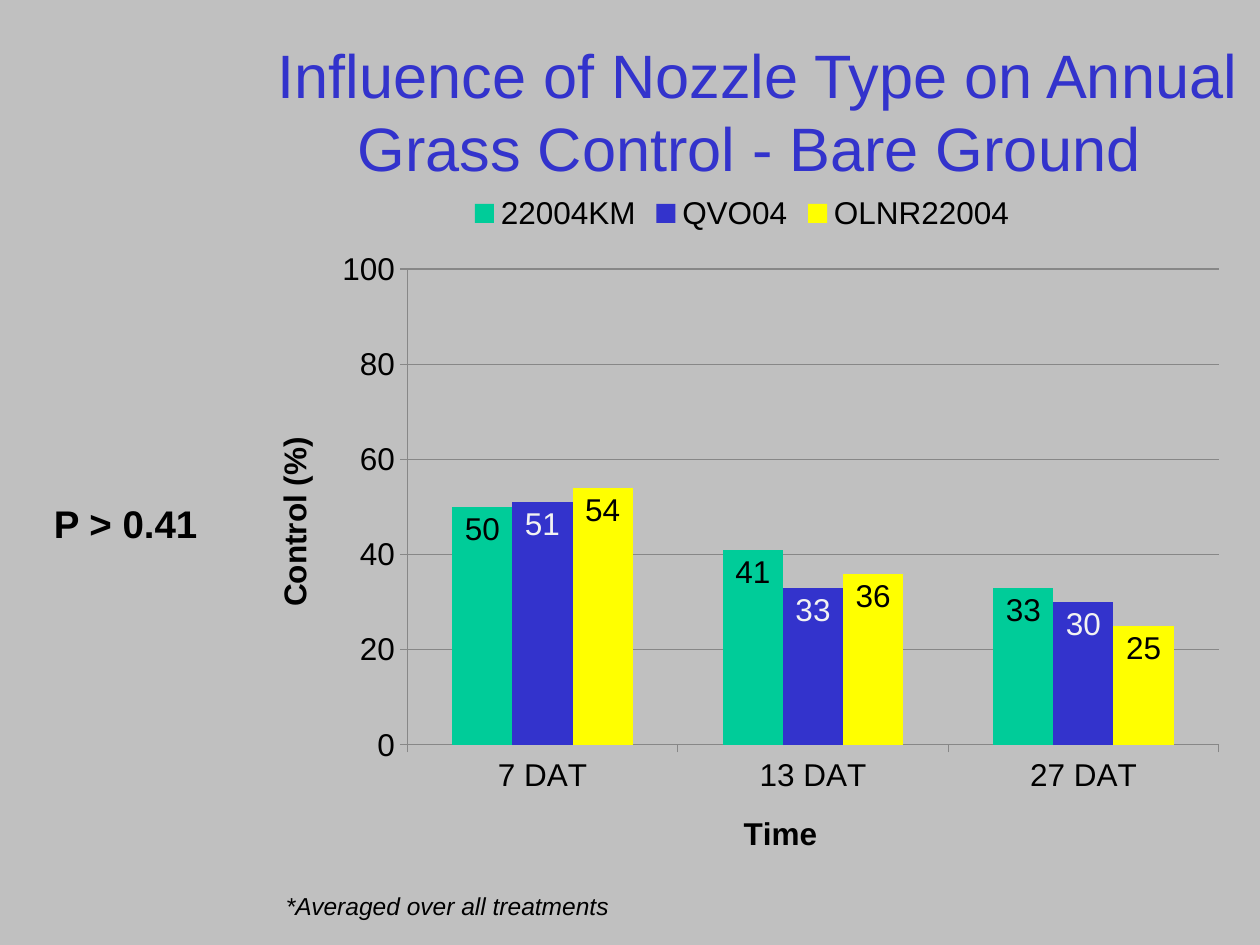
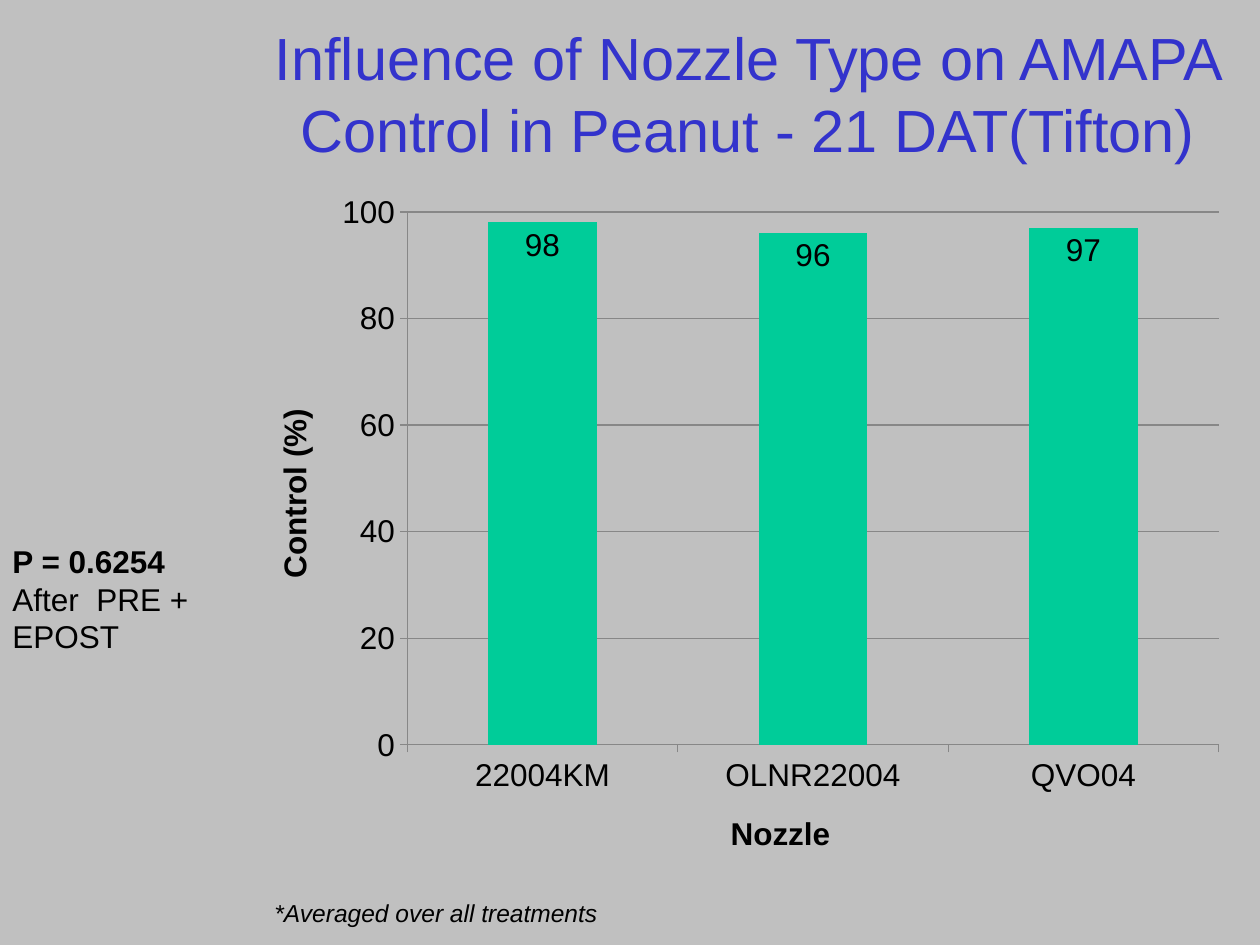
from dataclasses import dataclass

from pptx import Presentation
from pptx import util as u
from pptx.chart.data import CategoryChartData
from pptx.dml.color import RGBColor
from pptx.enum import chart as ch
from pptx.enum import text as tx


@dataclass(frozen=True)
class Theme:
    font: str = "Arial"
    background: RGBColor = RGBColor(0xC0, 0xC0, 0xC0)
    ink: RGBColor = RGBColor(0, 0, 0)
    pale: RGBColor = RGBColor(0xF2, 0xF2, 0xF2)
    green: RGBColor = RGBColor(0x00, 0xCC, 0x99)
    blue: RGBColor = RGBColor(0x33, 0x33, 0xCC)
    yellow: RGBColor = RGBColor(0xFF, 0xFF, 0x00)
    grid: RGBColor = RGBColor(0x87, 0x87, 0x87)
    chart_size: int = 18
    footnote_size: int = 14


THEME = Theme()
CHART_BOX = (1.95, 1.43, 7.88, 5.57)
TITLE_SIZE = (7.97, 1.25)
FOOTNOTE_SIZE = (3.5, 0.34)
COARSE, ULTRA, MEDIUM = "22004KM", "QVO04", "OLNR22004"
SERIES_STYLES = [
    (THEME.green, THEME.ink),
    (THEME.blue, THEME.pale),
    (THEME.yellow, THEME.ink),
]


def style_font(font, size, color=THEME.ink, bold=False, italic=False):
    font.name = THEME.font
    font.size = u.Pt(size)
    font.color.rgb = color
    font.bold = bold
    font.italic = italic


def add_text(page, box, lines, size, wrap=True, **style):
    """Place (text, bold) lines in a box and return its text frame."""
    frame = page.shapes.add_textbox(*map(u.Inches, box)).text_frame
    frame.word_wrap = wrap
    for index, (line, bold) in enumerate(lines):
        para = frame.add_paragraph() if index else frame.paragraphs[0]
        para.text = line
        style_font(para.font, size, bold=bold, **style)
    return frame


def add_title(page, corner, title, size):
    frame = add_text(page, corner + TITLE_SIZE, [(title, False)], size,
                     color=THEME.blue)
    frame.vertical_anchor = tx.MSO_ANCHOR.MIDDLE
    frame.paragraphs[0].alignment = tx.PP_ALIGN.CENTER


def add_footnote(page, corner):
    add_text(page, corner + FOOTNOTE_SIZE,
             [("*Averaged over all treatments", False)],
             THEME.footnote_size, italic=True)


def style_axis(axis, title):
    axis.has_title = True
    para = axis.axis_title.text_frame.paragraphs[0]
    para.text = title
    style_font(para.font, THEME.chart_size, bold=True)
    axis.major_tick_mark = ch.XL_TICK_MARK.OUTSIDE
    axis.minor_tick_mark = ch.XL_TICK_MARK.NONE
    axis.format.line.color.rgb = THEME.grid
    axis.format.line.width = u.Pt(0.75)


def style_series(series, fill, label_color):
    series.format.fill.solid()
    series.format.fill.fore_color.rgb = fill
    series.invert_if_negative = False
    labels = series.data_labels
    labels.show_value = True
    labels.position = ch.XL_LABEL_POSITION.INSIDE_END
    style_font(labels.font, THEME.chart_size, label_color)


def add_control_chart(page, box, category_title, categories, results):
    data = CategoryChartData()
    data.categories = categories
    for name, values in results.items():
        data.add_series(name, values)
    chart = page.shapes.add_chart(ch.XL_CHART_TYPE.COLUMN_CLUSTERED,
                                  *map(u.Inches, box), data).chart
    style_font(chart.font, THEME.chart_size)
    chart.has_title = False
    chart.has_legend = len(results) > 1
    if chart.has_legend:
        chart.legend.position = ch.XL_LEGEND_POSITION.TOP
        chart.legend.include_in_layout = False

    style_axis(chart.category_axis, category_title)
    control = chart.value_axis
    style_axis(control, "Control (%)")
    control.minimum_scale = 0
    control.maximum_scale = 100
    control.major_unit = 20
    control.has_major_gridlines = True
    control.major_gridlines.format.line.color.rgb = THEME.grid
    control.major_gridlines.format.line.width = u.Pt(0.75)

    plot = chart.plots[0]
    plot.gap_width = 150
    plot.vary_by_categories = False
    for series, (fill, label_color) in zip(plot.series, SERIES_STYLES):
        style_series(series, fill, label_color)


def add_page(deck):
    page = deck.slides.add_slide(deck.slide_layouts[6])
    page.background.fill.solid()
    page.background.fill.fore_color.rgb = THEME.background
    return page


def build_bare_ground(deck):
    page = add_page(deck)
    add_title(page, (2.03, 0.25), "Influence of Nozzle Type on Annual Grass "
              "Control - Bare Ground ", 35)
    add_control_chart(page, CHART_BOX, "Time", ["7 DAT", "13 DAT", "27 DAT"], {
        COARSE: (50, 41, 33),
        ULTRA: (51, 33, 30),
        MEDIUM: (54, 36, 25),
    })
    add_text(page, (0.33, 3.92, 1.36, 0.47), [("P > 0.41", True)], 22,
             wrap=False)
    add_footnote(page, (2.17, 7.02))


def build_peanut(deck):
    page = add_page(deck)
    add_title(page, (1.95, 0.11), "Influence of Nozzle Type on AMAPA "
              "Control in Peanut - 21 DAT(Tifton)", 34)
    add_control_chart(page, CHART_BOX, "Nozzle", [COARSE, MEDIUM, ULTRA],
                      {"Series 1": (98, 96, 97)})
    add_text(page, (0, 4.25, 2.25, 1.01),
             [("P = 0.6254", True), ("After  PRE + EPOST", False)], 18)
    add_footnote(page, (2.08, 7.08))


def main():
    deck = Presentation()
    deck.slide_width = u.Inches(10)
    deck.slide_height = u.Inches(7.5)
    build_bare_ground(deck)
    build_peanut(deck)
    deck.save("out.pptx")


if __name__ == "__main__":
    main()
